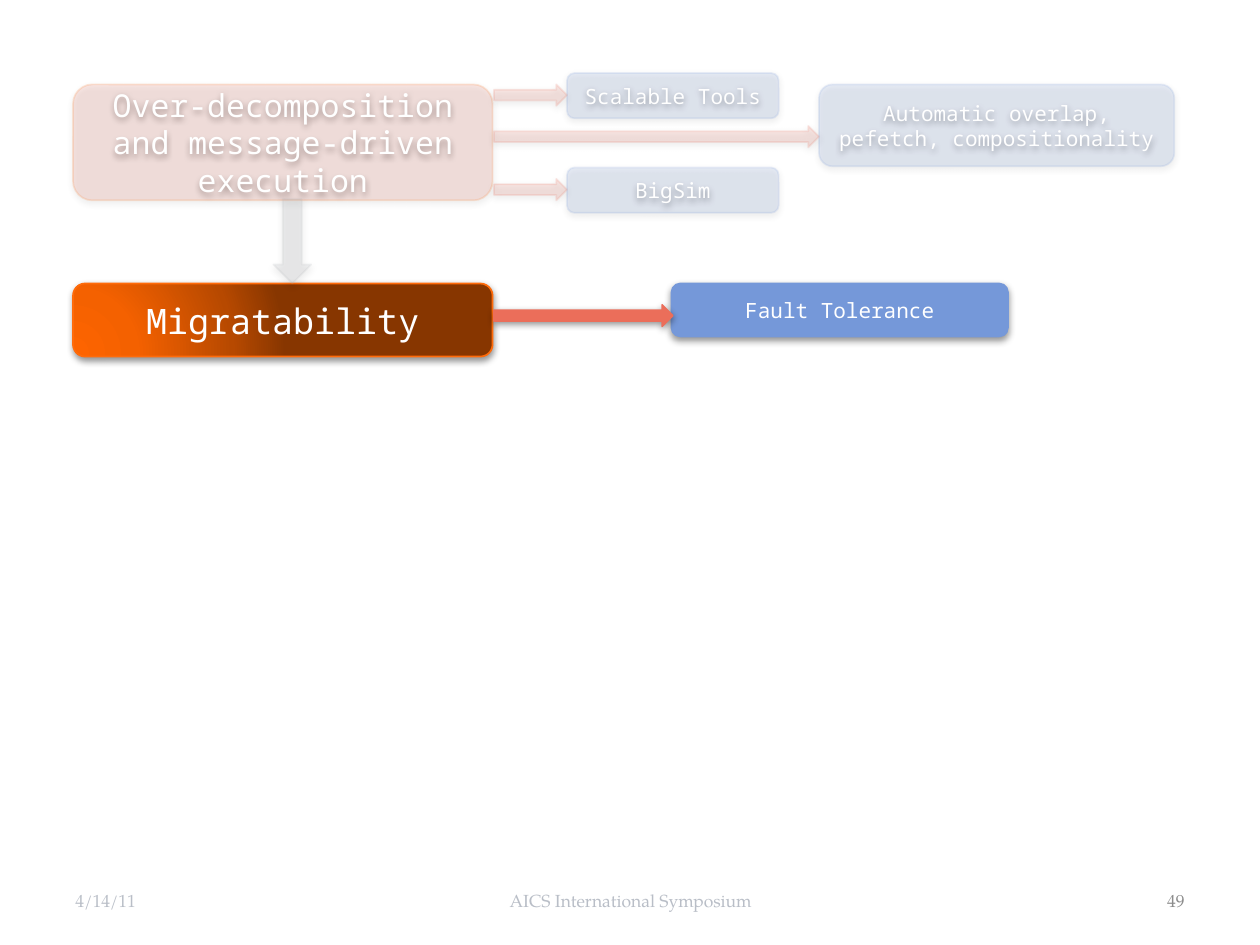
from lxml import etree
from pptx import Presentation
from pptx.dml.color import RGBColor
from pptx.enum.shapes import MSO_SHAPE
from pptx.enum.text import MSO_ANCHOR, PP_ALIGN
from pptx.oxml import parse_xml
from pptx.oxml.ns import nsdecls, qn
from pptx.util import Inches, Pt

ROUNDED = MSO_SHAPE.ROUNDED_RECTANGLE
RIGHT_ARROW = MSO_SHAPE.RIGHT_ARROW
DOWN_ARROW = MSO_SHAPE.DOWN_ARROW
MIDDLE = MSO_ANCHOR.MIDDLE
LEFT, CENTER, RIGHT = PP_ALIGN.LEFT, PP_ALIGN.CENTER, PP_ALIGN.RIGHT

BOX_FONT = "Noto Sans Mono"
FOOTER_FONT = "TeX Gyre Pagella"
WHITE, CORAL, BLUE, GRAY, ORANGE = "FFFFFF", "EB6E5A", "7598D9", "ADB0B5", "FF6B0A"
FADED = 15
GRADIENT_STOPS = [(0, "FD6400"), (30, "F46100"), (75, "B74900"), (100, "873600")]


def color(value):
    return RGBColor.from_string(value)


def write_text(shape, text, size, font, text_color, alignment):
    frame = shape.text_frame
    frame.word_wrap = True
    frame.vertical_anchor = MIDDLE
    para = frame.paragraphs[0]
    para.text = text
    para.alignment = alignment
    para.font.size = Pt(size)
    para.font.name = font
    para.font.color.rgb = color(text_color)


def add_shadow(shape):
    shape.shadow.inherit = False
    effects = shape._element.spPr.find(qn("a:effectLst"))
    effects.append(parse_xml(
        f'<a:outerShdw {nsdecls("a")} blurRad="{Pt(4)}" dist="{Pt(1.6)}" dir="5400000" rotWithShape="0">'
        '<a:srgbClr val="000000"><a:alpha val="42000"/></a:srgbClr></a:outerShdw>'))


def add_figure(slide, kind, place, fill, line=None, opacity=100):
    shape = slide.shapes.add_shape(kind, *map(Inches, place))
    shape.fill.solid()
    shape.fill.fore_color.rgb = color(fill)
    shape.line.color.rgb = color(line or fill)
    shape.line.width = Pt(1)
    if opacity < 100:
        for tint in shape._element.spPr.iter(qn("a:srgbClr")):
            etree.SubElement(tint, qn("a:alpha")).set("val", str(opacity * 1000))
    add_shadow(shape)
    return shape


def add_box(slide, text, place, fill, size=12, line=None, opacity=100):
    box = add_figure(slide, ROUNDED, place, fill, line, opacity)
    write_text(box, text, size, BOX_FONT, WHITE, CENTER)
    return box


def set_radial_gradient(shape, stops):
    stop_xml = "".join(
        f'<a:gs pos="{position * 1000}"><a:srgbClr val="{value}"/></a:gs>' for position, value in stops)
    gradient = parse_xml(
        f'<a:gradFill {nsdecls("a")} rotWithShape="1"><a:gsLst>{stop_xml}</a:gsLst>'
        '<a:path path="circle"><a:fillToRect l="5000" t="100000" r="120000" b="10000"/></a:path></a:gradFill>')
    properties = shape._element.spPr
    properties.replace(properties.find(qn("a:solidFill")), gradient)


def add_footer(slide, text, left, width, text_color, alignment):
    box = slide.shapes.add_textbox(Inches(left), Inches(6.95), Inches(width), Inches(0.4))
    write_text(box, text, 10, FOOTER_FONT, text_color, alignment)


def main():
    deck = Presentation()
    deck.slide_width, deck.slide_height = Inches(10), Inches(7.5)
    slide = deck.slides.add_slide(deck.slide_layouts[6])

    add_box(slide, "Over-decomposition and message-driven execution",
            (0.58, 0.67, 3.33, 0.92), CORAL, 18, ORANGE, FADED)
    migratability = add_box(slide, "Migratability", (0.58, 2.25, 3.33, 0.58), ORANGE, 20)
    set_radial_gradient(migratability, GRADIENT_STOPS)

    for text, place, opacity in [
        ("Scalable Tools", (4.5, 0.58, 1.68, 0.36), FADED),
        ("Automatic overlap, pefetch, compositionality", (6.5, 0.67, 2.82, 0.65), FADED),
        ("BigSim", (4.5, 1.33, 1.68, 0.36), FADED),
        ("Fault Tolerance", (5.33, 2.25, 2.67, 0.42), 100),
    ]:
        add_box(slide, text, place, BLUE, opacity=opacity)

    add_figure(slide, DOWN_ARROW, (2.17, 1.58, 0.3, 0.67), GRAY, opacity=FADED)
    for top, width, opacity in [(0.67, 0.58, FADED), (1, 2.58, FADED), (1.42, 0.58, FADED), (2.42, 1.42, 100)]:
        add_figure(slide, RIGHT_ARROW, (3.92, top, width, 0.17), CORAL, opacity=opacity)

    add_footer(slide, "4/14/11", 0.5, 2.33, "B9BEC7", LEFT)
    add_footer(slide, "AICS International Symposium", 3.42, 3.17, "B9BEC7", CENTER)
    add_footer(slide, "49", 7.17, 2.33, "8C8C8C", RIGHT)
    deck.save("out.pptx")


if __name__ == "__main__":
    main()
